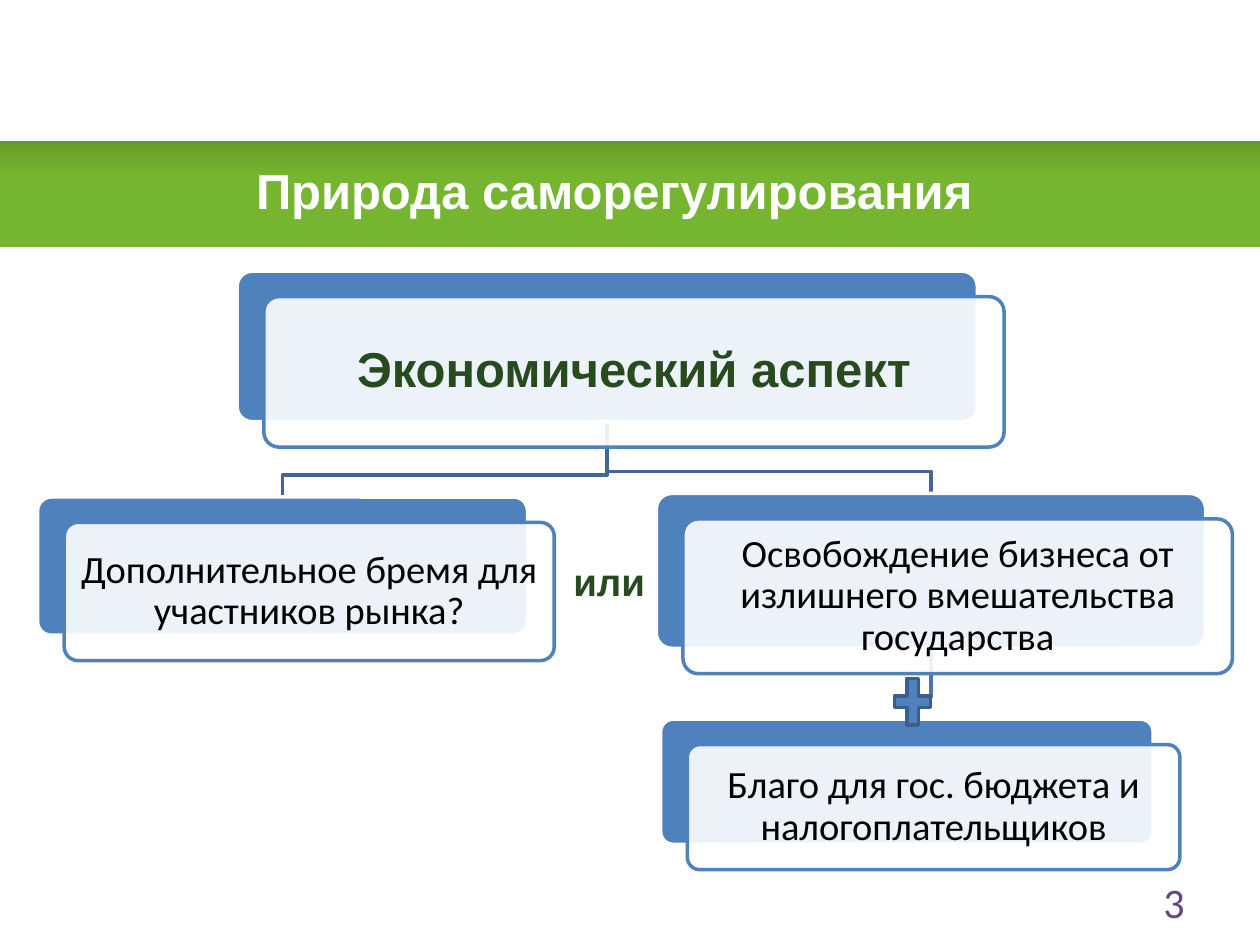
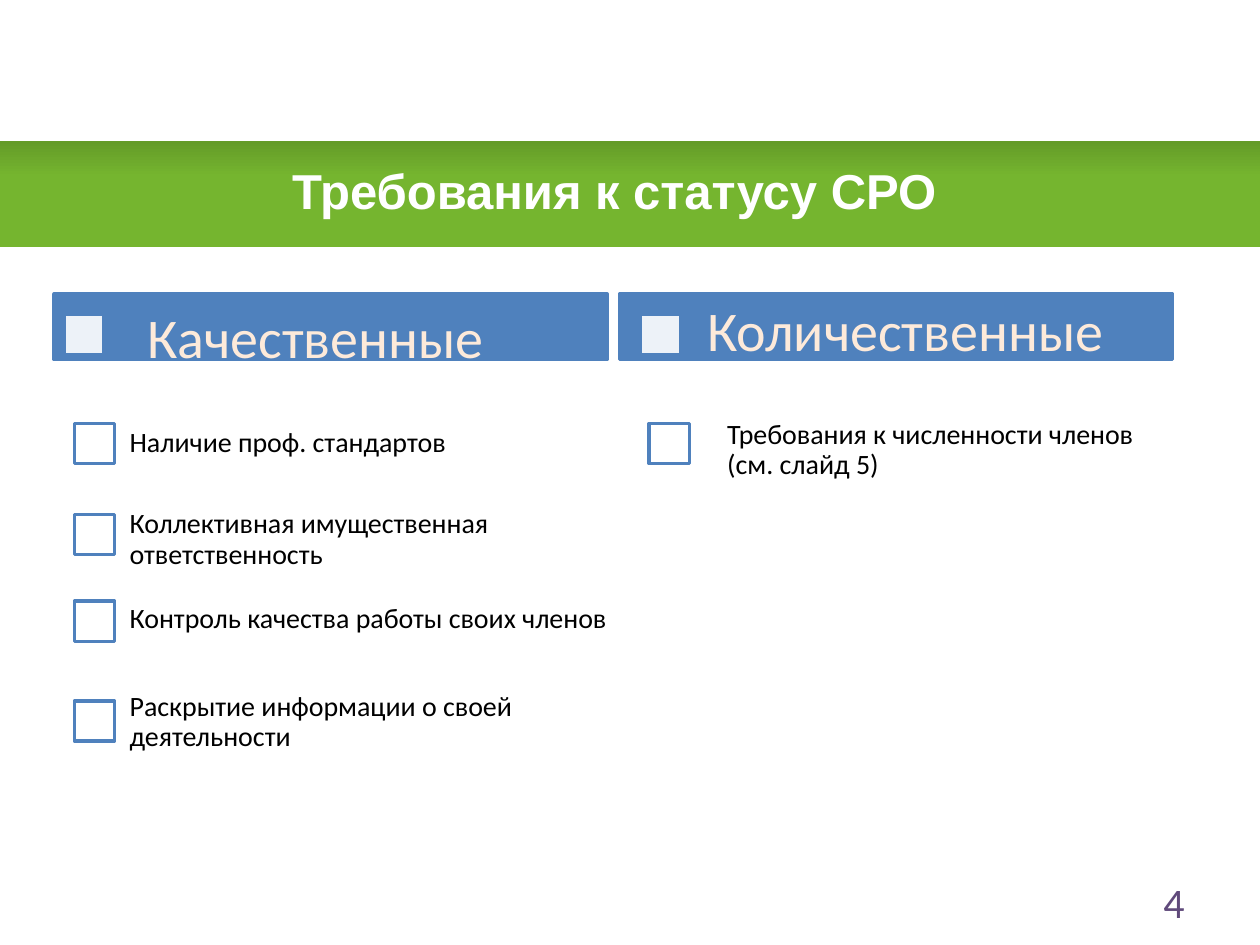
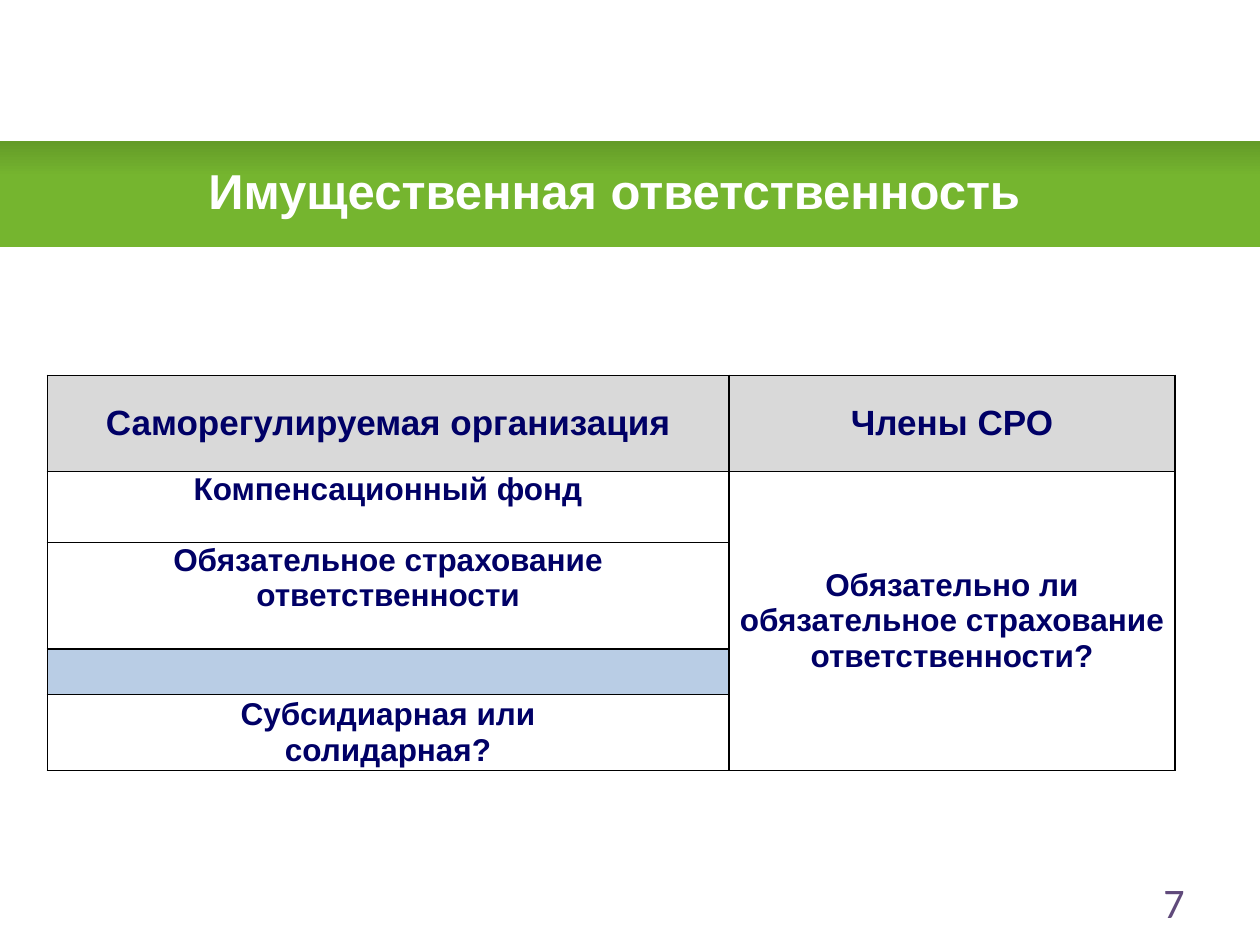
"""Build three slides on the self-regulation of business."""
from dataclasses import dataclass

from lxml import etree
from pptx import Presentation
from pptx.dml.color import RGBColor
from pptx.enum import shapes, text
from pptx.oxml.ns import qn
from pptx.util import Pt


@dataclass(frozen=True)
class Theme:
    """Colours, fonts and type sizes."""
    white: str = "FFFFFF"
    black: str = "000000"
    shade: str = "649B28"
    green: str = "75B52F"
    dark: str = "274A1E"
    blue: str = "4F81BD"
    edge: str = "3A5F8C"
    link: str = "3F6797"
    twig: str = "4875AC"
    cream: str = "FDEADA"
    plum: str = "604A7B"
    navy: str = "000066"
    grey: str = "D9D9D9"
    pale: str = "B9CDE5"
    sans: str = "Arial"
    body: str = "Calibri"
    title: int = 28
    label: int = 22
    head: int = 32
    item: int = 16
    page: int = 24
    top: int = 20
    cell: int = 18


T = Theme()
ALIGN, ANCHOR, SHAPE = text.PP_ALIGN, text.MSO_ANCHOR, shapes.MSO_SHAPE

WIDE, HIGH = 720, 540
BAND = (0, 80.5, WIDE, 60.5)
TITLE = (27, 83.5, 648, 50.5)
PAGE = (516, 500.5, 168, 29)

CARDS = {
    "aspect": ("Экономический аспект", (135.5, 155, 423, 86)),
    "burden": ("Дополнительное бремя для участников рынка?", (21.5, 284, 280, 79)),
    "relief": ("Освобождение бизнеса от излишнего вмешательства государства",
               (375, 282, 314, 88.5)),
    "gain": ("Благо для гос. бюджета и налогоплательщиков", (377.5, 411, 281.5, 71.5)),
}
LINKS = [("relief", "gain", T.twig), ("aspect", "relief", T.link),
         ("aspect", "burden", T.link)]
SHIFT, BEND = (15.25, 14.5), 12.5
CHOICE = ("или", (320.5, 315.5, 57, 34))
PLUS = (507.5, 383, 28, 36)

BAR, BOX = (316, 37.5), 23
BAR_TOP, MARK_TOP = 168, 179.5
LISTS = [
    dict(head="Качественные", bar=31, mark=36.5, name=(22.5, 161), box=42.5,
         left=65.5, width=294, items=[
             ("Наличие проф. стандартов", 242, 253.5),
             ("Коллективная имущественная ответственность", 294, 308.5),
             ("Контроль качества работы своих членов", 343.5, 354),
             ("Раскрытие информации о своей деятельности", 400.5, 413)]),
    dict(head="Количественные", bar=354, mark=366, name=(359.5, 157), box=371,
         left=407, width=268.5, items=[
             ("Требования к численности членов (см. слайд 5)", 242, 257.5)]),
]

HEADS = ["Саморегулируемая организация", "Члены СРО"]
FORMS = ["Компенсационный фонд", "Обязательное страхование ответственности",
         "", "Субсидиарная или\nсолидарная?"]
DOUBT = "Обязательно ли обязательное страхование ответственности?"
GRID = (27, 214.5)
COLS, ROWS = [389.5, 255], [55, 40.5, 61, 26, 41]


def rgb(code):
    """Turn a hex code into a colour."""
    return RGBColor.from_string(code)


def pts(nums):
    """Turn numbers into point lengths."""
    return [Pt(n) for n in nums]


def write(frame, words, host=None, size=T.label, color=T.black, font=T.body,
          bold=False, align=ALIGN.CENTER, anchor=ANCHOR.MIDDLE,
          inset=(7.2, 3.6), lead=None):
    """Put formatted text in a frame; host holds the margins of a cell."""
    host = host or frame
    host.margin_left = host.margin_right = Pt(inset[0])
    host.margin_top = host.margin_bottom = Pt(inset[1])
    host.vertical_anchor = anchor
    frame.word_wrap = True
    for n, line in enumerate(words.split("\n")):
        para = frame.add_paragraph() if n else frame.paragraphs[0]
        para.alignment = align
        if lead:
            para.line_spacing = lead
        if line:
            run = para.add_run()
            run.text = line
            run.font.size, run.font.name, run.font.bold = Pt(size), font, bold
            run.font.color.rgb = rgb(color)


def label(slide, box, words, **form):
    """Add a text box."""
    write(slide.shapes.add_textbox(*pts(box)).text_frame, words, **form)


def draw(slide, kind, box, fill, line=None, alpha=None):
    """Add a preset shape."""
    item = slide.shapes.add_shape(kind, *pts(box))
    item.shadow.inherit = False
    item.fill.solid()
    item.fill.fore_color.rgb = rgb(fill)
    if alpha:
        tint = item.fill._xPr.find(qn("a:solidFill"))[0]
        etree.SubElement(tint, qn("a:alpha"), val=str(alpha * 1000))
    if line:
        item.line.color.rgb = rgb(line)
        item.line.width = Pt(2)
    else:
        item.line.fill.background()
    return item


def start(deck, title, page):
    """Add a slide with its band, title and number."""
    slide = deck.slides.add_slide(deck.slide_layouts[6])
    fill = draw(slide, SHAPE.RECTANGLE, BAND, T.green).fill
    fill.gradient()
    fill.gradient_angle = 270
    for stop, color, spot in zip(fill.gradient_stops, (T.shade, T.green), (0, 0.34)):
        stop.color.rgb, stop.position = rgb(color), spot
    label(slide, TITLE, title, size=T.title, color=T.white, font=T.sans, bold=True)
    label(slide, PAGE, page, size=T.page, color=T.plum, align=ALIGN.RIGHT)
    return slide


def join(slide, above, below, color):
    """Draw a stepped line from one card down to another."""
    x, y, w, h = CARDS[above][1]
    left, end, wide, _ = CARDS[below][1]
    x, y, goal, turn = x + w / 2, y + h, left + wide / 2, end - BEND
    pen = slide.shapes.build_freeform(Pt(x), Pt(y))
    pen.add_line_segments([pts(p) for p in ((x, turn), (goal, turn), (goal, end))],
                          close=False)
    line = pen.convert_to_shape()
    line.shadow.inherit = False
    line.fill.background()
    line.line.color.rgb = rgb(color)
    line.line.width = Pt(2)


def nature(slide):
    """Fill the slide with the tree of cards."""
    for link in LINKS:
        join(slide, *link)
    strong = dict(size=T.title, color=T.dark, font=T.sans, bold=True)
    for key, (words, (x, y, w, h)) in CARDS.items():
        back = draw(slide, SHAPE.ROUNDED_RECTANGLE, (x, y, w, h), T.blue, T.white)
        front = draw(slide, SHAPE.ROUNDED_RECTANGLE,
                     (x + SHIFT[0], y + SHIFT[1], w, h), T.white, T.blue, 90)
        back.adjustments[0] = front.adjustments[0] = 0.1
        write(front.text_frame, words, inset=(6, 6), lead=0.9,
              **(strong if key == "aspect" else {}))
    words, box = CHOICE
    label(slide, box, words, **{**strong, "size": T.label},
          align=ALIGN.LEFT, anchor=ANCHOR.TOP)
    draw(slide, SHAPE.MATH_PLUS, PLUS, T.blue, T.edge)


def status(slide):
    """Fill the slide with two check lists."""
    for part in LISTS:
        draw(slide, SHAPE.RECTANGLE, (part["bar"], BAR_TOP, *BAR), T.blue, T.blue)
        draw(slide, SHAPE.RECTANGLE, (part["mark"], MARK_TOP, BOX, BOX),
             T.white, T.blue, 90)
        label(slide, (*part["name"], BAR[0], 67), part["head"], size=T.head,
              color=T.cream, inset=(5, 3), lead=0.9)
        for words, top, mid in part["items"]:
            draw(slide, SHAPE.RECTANGLE, (part["box"], top, BOX, BOX), T.white, T.blue)
            label(slide, (part["left"], mid - 27, part["width"], 54), words,
                  size=T.item, align=ALIGN.LEFT, inset=(8.6, 8.6), lead=0.9)


def frame(cell, fill):
    """Rule all sides of a cell and colour it."""
    props = cell._tc.get_or_add_tcPr()
    for side in "LRTB":
        line = etree.SubElement(props, qn(f"a:ln{side}"), w=str(Pt(1)))
        paint = etree.SubElement(line, qn("a:solidFill"))
        etree.SubElement(paint, qn("a:srgbClr"), val=T.black)
    if fill:
        cell.fill.solid()
        cell.fill.fore_color.rgb = rgb(fill)
    else:
        cell.fill.background()


def duty(slide):
    """Fill the slide with the liability table."""
    size = (sum(COLS), sum(ROWS))
    grid = slide.shapes.add_table(len(ROWS), len(COLS), *pts(GRID + size)).table
    grid.first_row = grid.horz_banding = False
    for col, wide in zip(grid.columns, COLS):
        col.width = Pt(wide)
    for row, high in zip(grid.rows, ROWS):
        row.height = Pt(high)
    grid.cell(1, 1).merge(grid.cell(len(FORMS), 1))
    rows = [HEADS, [FORMS[0], DOUBT]] + [[form, ""] for form in FORMS[1:]]
    for r, row in enumerate(rows):
        for c, words in enumerate(row):
            cell = grid.cell(r, c)
            blank = c == 0 and not words
            frame(cell, T.grey if r == 0 else T.pale if blank else None)
            high = r in (1, 2) and c == 0
            write(cell.text_frame, words, cell, size=T.cell if r else T.top,
                  color=T.navy, font=T.sans, bold=True, inset=(0.7, 0),
                  anchor=ANCHOR.TOP if high else ANCHOR.MIDDLE)


SLIDES = [("Природа саморегулирования", "3", nature),
          ("Требования к статусу СРО", "4", status),
          ("Имущественная ответственность", "7", duty)]


def main():
    """Make the deck and save it."""
    deck = Presentation()
    deck.slide_width, deck.slide_height = Pt(WIDE), Pt(HIGH)
    for title, page, fill in SLIDES:
        fill(start(deck, title, page))
    deck.save("out.pptx")


if __name__ == "__main__":
    main()
